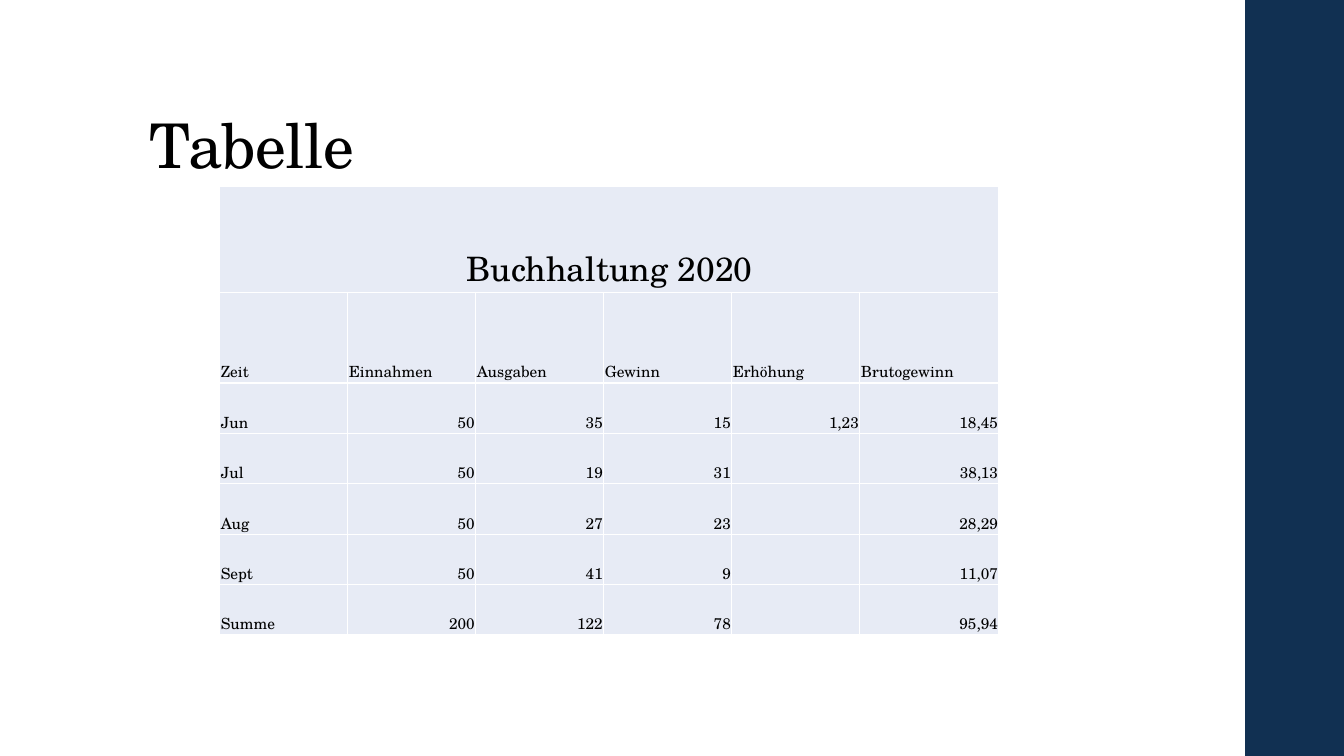
from dataclasses import dataclass

from lxml import etree
from pptx import Presentation
from pptx.dml.color import RGBColor
from pptx.enum.shapes import MSO_SHAPE
from pptx.enum.text import MSO_ANCHOR, PP_ALIGN
from pptx.oxml.ns import qn
from pptx.util import Inches, Pt

RECTANGLE = MSO_SHAPE.RECTANGLE
BOTTOM = MSO_ANCHOR.BOTTOM
LEFT, CENTER, RIGHT = PP_ALIGN.LEFT, PP_ALIGN.CENTER, PP_ALIGN.RIGHT


@dataclass(frozen=True)
class Theme:
    font: str = "TeX Gyre Schola"
    text: str = "000000"
    band: str = "113052"
    cell: str = "E7EBF5"
    border: str = "FFFFFF"
    title_size: int = 44
    caption_size: int = 24
    body_size: int = 11


THEME = Theme()

CAPTION = "Buchhaltung 2020"
HEADERS = ["Zeit", "Einnahmen", "Ausgaben", "Gewinn", "Erhöhung", "Brutogewinn"]
MONTHS = [
    ["Jun", "50", "35", "15", "1,23", "18,45"],
    ["Jul", "50", "19", "31", "", "38,13"],
    ["Aug", "50", "27", "23", "", "28,29"],
    ["Sept", "50", "41", "9", "", "11,07"],
    ["Summe", "200", "122", "78", "", "95,94"],
]
COLUMN_WIDTHS = [1.27] * 5 + [1.38]
ROW_HEIGHTS = [1.05, 0.9] + [0.5] * len(MONTHS)


def add_run(paragraph, text, size):
    run = paragraph.add_run()
    run.text = text
    run.font.name = THEME.font
    run.font.size = Pt(size)
    run.font.color.rgb = RGBColor.from_string(THEME.text)
    return run


def style_cell(cell):
    """Set the fill, margins, anchor and thin borders of a table cell."""
    cell.fill.solid()
    cell.fill.fore_color.rgb = RGBColor.from_string(THEME.cell)
    cell.vertical_anchor = BOTTOM
    cell.margin_left = cell.margin_right = cell.margin_top = Inches(0.01)
    cell.margin_bottom = 0
    properties = cell._tc.get_or_add_tcPr()
    # Border lines must come before the fill.
    for position, side in enumerate(("a:lnL", "a:lnR", "a:lnT", "a:lnB")):
        line = etree.Element(qn(side), w=str(Pt(1)))
        fill = etree.SubElement(line, qn("a:solidFill"))
        etree.SubElement(fill, qn("a:srgbClr"), val=THEME.border)
        properties.insert(position, line)


presentation = Presentation()
presentation.slide_width = Inches(13.33)
presentation.slide_height = Inches(7.5)
slide = presentation.slides.add_slide(presentation.slide_layouts[5])

# Side band
side_band = slide.shapes.add_shape(
    RECTANGLE, Inches(12.35), 0, Inches(1), Inches(7.5))
side_band.shadow.inherit = False
side_band.fill.solid()
side_band.fill.fore_color.rgb = RGBColor.from_string(THEME.band)
side_band.line.fill.background()

# Title
title = slide.shapes.title
title.left, title.top = Inches(1.38), Inches(0.4)
title.width, title.height = Inches(10.6), Inches(1.45)
title.text_frame.vertical_anchor = BOTTOM
title.text_frame.word_wrap = True
title_paragraph = title.text_frame.paragraphs[0]
title_paragraph.alignment = LEFT
title_paragraph.line_spacing = 0.9
title_run = add_run(title_paragraph, "Tabelle", THEME.title_size)
title_run.font._element.set("spc", "-50")

# Accounting table
rows = [[CAPTION] + [""] * (len(HEADERS) - 1), HEADERS] + MONTHS
table = slide.shapes.add_table(
    len(rows), len(HEADERS), Inches(2.18), Inches(1.85),
    Inches(sum(COLUMN_WIDTHS)), Inches(sum(ROW_HEIGHTS))).table
table.first_row = False
table.horz_banding = False
for column, width in zip(table.columns, COLUMN_WIDTHS):
    column.width = Inches(width)
for row, height in zip(table.rows, ROW_HEIGHTS):
    row.height = Inches(height)
table.cell(0, 0).merge(table.cell(0, len(HEADERS) - 1))

for row_index, values in enumerate(rows):
    for column_index, value in enumerate(values):
        cell = table.cell(row_index, column_index)
        style_cell(cell)
        if not value:
            continue
        paragraph = cell.text_frame.paragraphs[0]
        if row_index == 0:
            paragraph.alignment = CENTER
        elif row_index > 1 and column_index > 0:
            paragraph.alignment = RIGHT
        else:
            paragraph.alignment = LEFT
        size = THEME.caption_size if row_index == 0 else THEME.body_size
        add_run(paragraph, value, size)

presentation.save("out.pptx")
